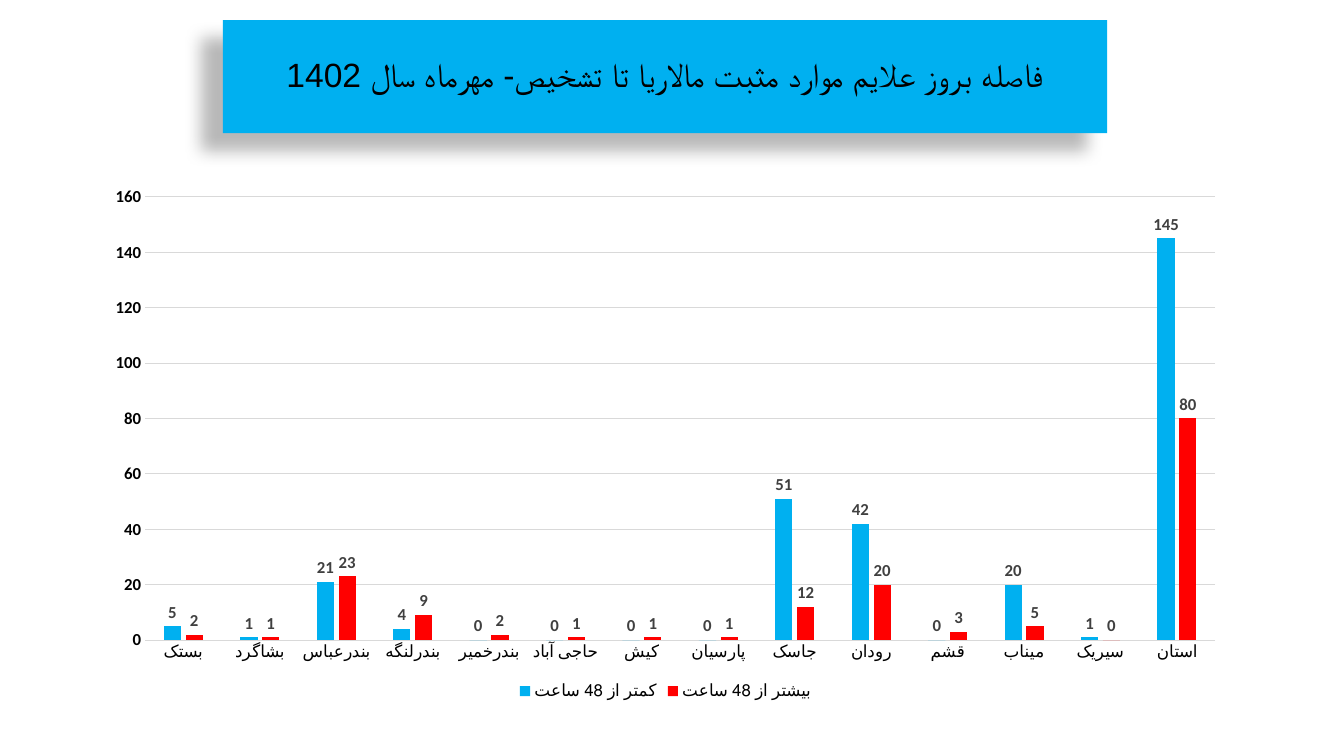
"""Build the slide on the delay from malaria symptoms to diagnosis."""
from dataclasses import dataclass

from lxml import etree
from pptx import Presentation, util as u
from pptx.chart.data import CategoryChartData
from pptx.dml.color import RGBColor
from pptx.enum import chart as ec, text as et
from pptx.oxml import ns

HUES = {"blue": "00B0F0", "red": "FF0000", "ink": "000000",
        "label": "404040", "grid": "D9D9D9"}
FONT = "Calibri"
WIDE, HIGH = u.Inches(13.33), u.Inches(7.5)
TITLE = "فاصله بروز علایم موارد مثبت مالاریا تا تشخیص- مهرماه سال 1402"
TOWNS = ["بستک", "بشاگرد", "بندرعباس", "بندرلنگه", "بندرخمیر", "حاجی آباد", "کیش",
         "پارسیان", "جاسک", "رودان", "قشم", "میناب", "سیریک", "استان"]


@dataclass
class Group:
    name: str
    hue: str
    cases: list[int]


@dataclass
class Box:
    """Hold a frame as percentages of the slide's size."""
    left: float
    top: float
    width: float
    height: float

    def frame(self) -> list[int]:
        sides = (self.left, WIDE), (self.top, HIGH), (self.width, WIDE), (self.height, HIGH)
        return [round(part * full / 100) for part, full in sides]


GROUPS = [
    Group("کمتر از 48 ساعت", "blue", [5, 1, 21, 4, 0, 0, 0, 0, 51, 42, 0, 20, 1, 145]),
    Group("بیشتر از 48 ساعت", "red", [2, 1, 23, 9, 2, 1, 1, 1, 12, 20, 3, 5, 0, 80]),
]
HEAD = Box(16.58, 2.67, 65.79, 14.93)
PLOT = Box(6.9, 23.33, 85.22, 69.73)


def tint(hue: str) -> RGBColor:
    return RGBColor.from_string(HUES[hue])


def style(font, size: float, hue: str = "ink", bold: bool = False) -> None:
    font.name, font.size, font.bold = FONT, u.Pt(size), bold
    font.color.rgb = tint(hue)


def rule(line) -> None:
    line.color.rgb, line.width = tint("grid"), u.Pt(0.75)


def shade(shape) -> None:
    """Add a soft shadow falling to the lower left."""
    shape.shadow.inherit = False
    glow = shape.element.spPr.find(ns.qn("a:effectLst"))
    cast = etree.SubElement(glow, ns.qn("a:outerShdw"), blurRad=str(u.Pt(11.8)),
                            dist=str(u.Pt(19.7)), dir=str(141 * 60000),
                            algn="ctr", rotWithShape="0")
    tone = etree.SubElement(cast, ns.qn("a:srgbClr"), val=HUES["ink"])
    etree.SubElement(tone, ns.qn("a:alpha"), val="28000")


def add_head(slide) -> None:
    head = slide.shapes.title
    head.left, head.top, head.width, head.height = HEAD.frame()
    head.fill.solid()
    head.fill.fore_color.rgb = tint("blue")
    head.line.fill.background()
    shade(head)
    frame = head.text_frame
    frame.text = TITLE
    frame.word_wrap, frame.auto_size = True, et.MSO_AUTO_SIZE.NONE
    frame.vertical_anchor = et.MSO_ANCHOR.MIDDLE
    para = frame.paragraphs[0]
    para.alignment, para.line_spacing = et.PP_ALIGN.CENTER, 0.9
    style(para.font, 24)
    props = para.font._element
    etree.SubElement(props, ns.qn("a:cs"), typeface="Arial")
    props.getparent().set("rtl", "1")


def add_plot(slide) -> None:
    data = CategoryChartData()
    data.categories = TOWNS
    for group in GROUPS:
        data.add_series(group.name, group.cases)
    chart = slide.shapes.add_chart(ec.XL_CHART_TYPE.COLUMN_CLUSTERED,
                                   *PLOT.frame(), data).chart
    style(chart.font, 10)
    chart.has_title = False
    chart.has_legend = True
    chart.legend.position = ec.XL_LEGEND_POSITION.BOTTOM
    chart.legend.include_in_layout = False
    style(chart.legend.font, 12)

    towns, scale = chart.category_axis, chart.value_axis
    for axis in (towns, scale):
        axis.major_tick_mark = axis.minor_tick_mark = ec.XL_TICK_MARK.NONE
        style(axis.tick_labels.font, 12, bold=axis is scale)
    rule(towns.format.line)
    scale.format.line.fill.background()
    rule(scale.major_gridlines.format.line)
    scale.minimum_scale, scale.maximum_scale, scale.major_unit = 0, 160, 20

    plot = chart.plots[0]
    plot.gap_width, plot.overlap, plot.vary_by_categories = 219, -27, False
    for bars, group in zip(plot.series, GROUPS):
        bars.format.fill.solid()
        bars.format.fill.fore_color.rgb = tint(group.hue)
        bars.invert_if_negative = False
        labels = bars.data_labels
        labels.show_value = True
        labels.position = ec.XL_LABEL_POSITION.OUTSIDE_END
        style(labels.font, 12, "label", True)


def main() -> None:
    deck = Presentation()
    deck.slide_width, deck.slide_height = WIDE, HIGH
    slide = deck.slides.add_slide(deck.slide_layouts[5])
    add_head(slide)
    add_plot(slide)
    deck.save("out.pptx")


if __name__ == "__main__":
    main()
